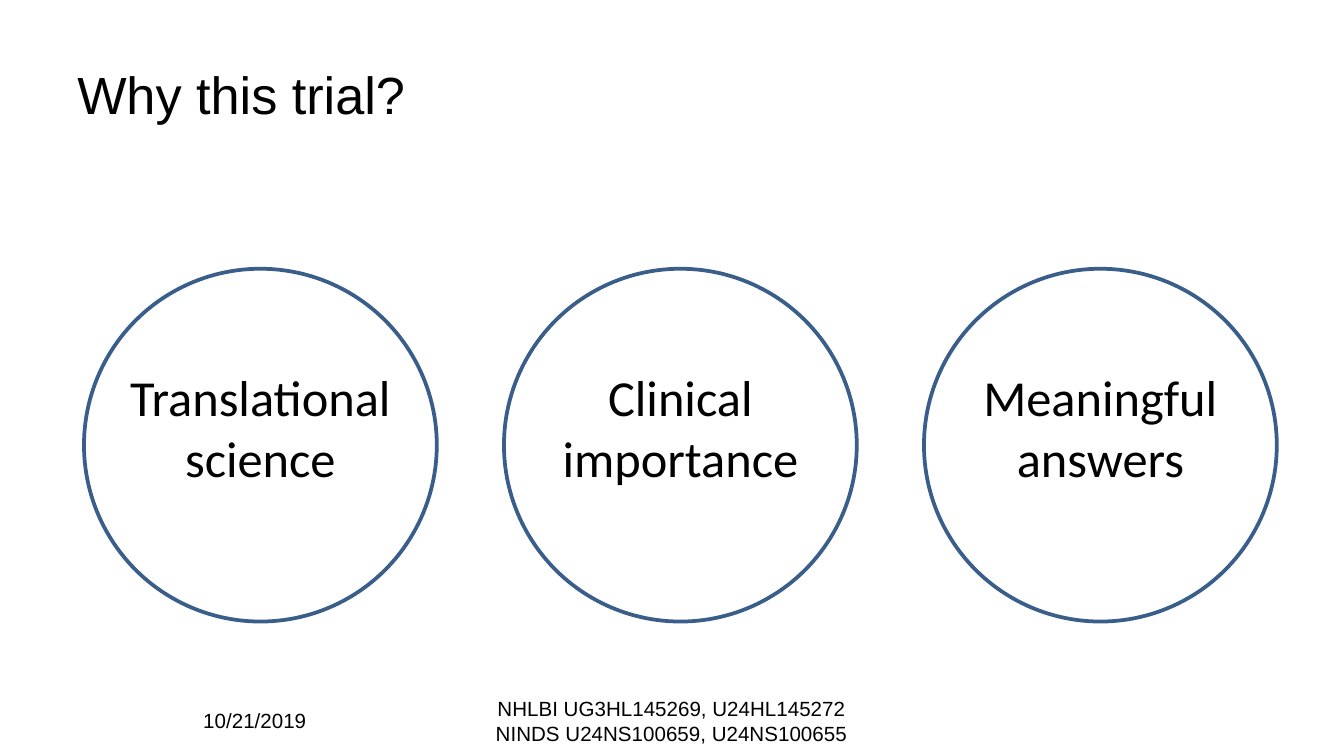
from pptx import Presentation
from pptx import util as u
from pptx.dml.color import RGBColor
from pptx.enum import shapes, text

# A grid of 16 columns by 9 rows of square cells
WIDE = 10
CELL = WIDE / 16
HIGH = 9 * CELL
COLORS = {"ink": "000000", "ring": "395E89", "page": "FFFFFF"}
THEMES = ["Translational science", "Clinical importance", "Meaningful answers"]


def tint(name):
    return RGBColor.from_string(COLORS[name])


def place(box):
    return [u.Inches(cells * CELL) for cells in box]


def add_text(slide, box, words, size, font="Arial", align="LEFT", anchor="MIDDLE"):
    frame = slide.shapes.add_textbox(*place(box)).text_frame
    frame.word_wrap = True
    frame.vertical_anchor = getattr(text.MSO_ANCHOR, anchor)
    frame.margin_left = frame.margin_right = u.Pt(5.4)
    frame.margin_top = frame.margin_bottom = u.Pt(2.7)
    para = frame.paragraphs[0]
    para.alignment = getattr(text.PP_ALIGN, align)
    run = para.add_run()
    run.text = words
    run.font.name, run.font.size = font, u.Pt(size)
    run.font.color.rgb = tint("ink")


def add_title(slide, box):
    add_text(slide, box, "Why this trial?", 28)


def add_rings(slide, box):
    left, top, width, side = box
    step = (width - side) / (len(THEMES) - 1)
    lefts = [left + i * step for i in range(len(THEMES))]

    # Circles
    for x in lefts:
        ring = slide.shapes.add_shape(
            shapes.MSO_SHAPE.OVAL, *place((x, top, side, side)))
        ring.shadow.inherit = False
        ring.fill.background()
        ring.line.color.rgb = tint("ring")
        ring.line.width = u.Pt(2)

    # Labels, centred across each circle
    wide = 4
    for x, theme in zip(lefts, THEMES):
        spot = (x + (side - wide) / 2, top + 1.1, wide, 1.57)
        add_text(slide, spot, theme, 27, "Calibri", "CENTER", "TOP")


def add_footer(slide, box):
    left, top, width, high = box
    # Date
    add_text(slide, (left, top, 2.24, high), "10/21/2019", 11)
    # Grant numbers, flush with the right end of the footer
    wide = 5.07
    add_text(slide, (left + width - wide, top, wide, high),
             "NHLBI UG3HL145269, U24HL145272 NINDS U24NS100659, U24NS100655",
             11, align="CENTER")


def main():
    deck = Presentation()
    deck.slide_width, deck.slide_height = u.Inches(WIDE), u.Inches(HIGH)
    slide = deck.slides.add_slide(deck.slide_layouts[6])
    slide.background.fill.solid()
    slide.background.fill.fore_color.rgb = tint("page")

    add_title(slide, (0.8, 0.36, 14.4, 1.5))
    add_rings(slide, (1, 3.2, 14.2, 4.2))
    add_footer(slide, (2.3, 8.34, 8.23, 0.48))
    deck.save("out.pptx")


if __name__ == "__main__":
    main()
